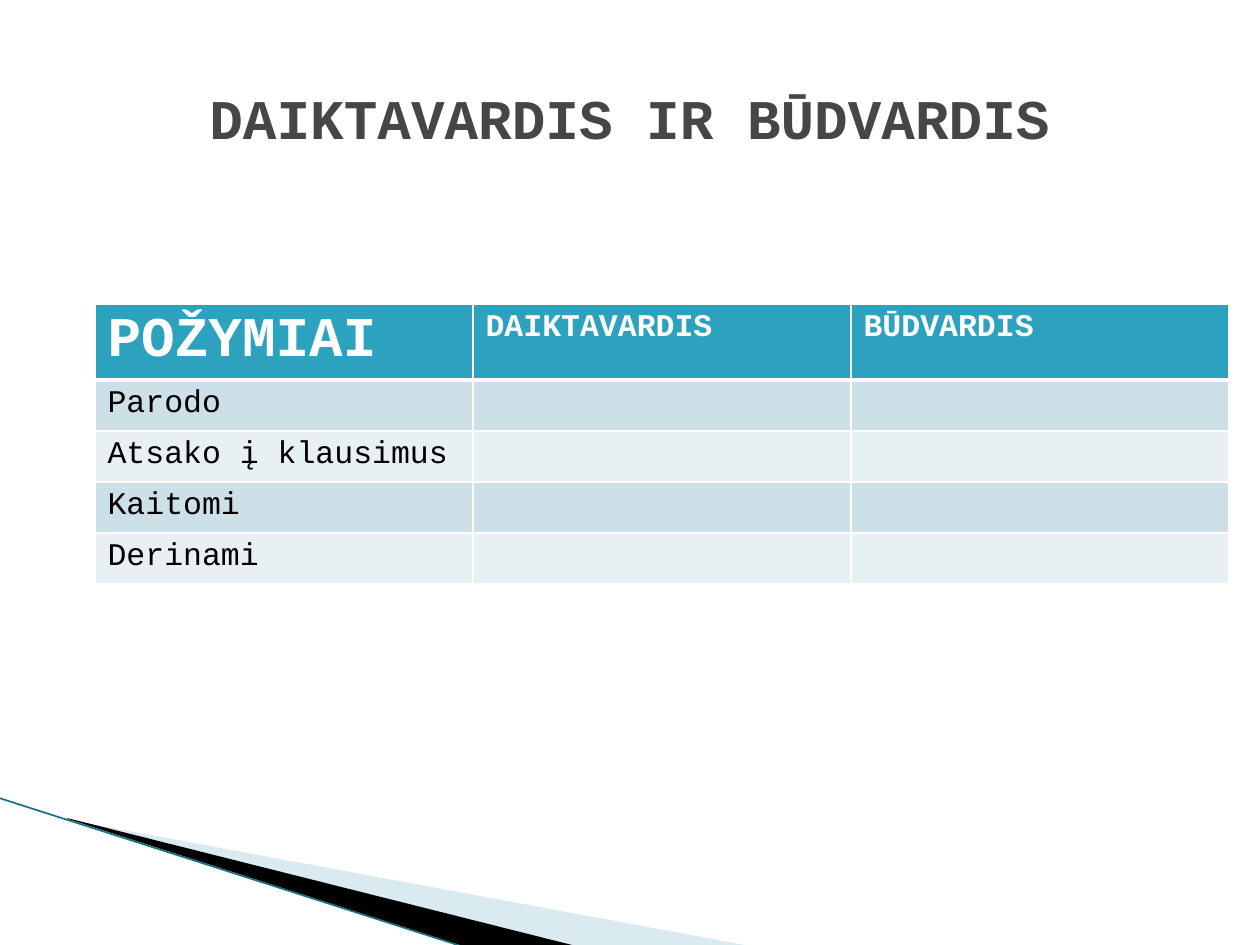
"""Build a slide with a table comparing nouns and adjectives in Lithuanian."""
from lxml import etree
from pptx import Presentation
from pptx import util as u
from pptx.dml.color import RGBColor
from pptx.enum import shapes, text
from pptx.oxml.ns import qn

PX = 914400 / 126
FONT = "Courier New"
COLORS = {
    "title": "464646",
    "header": "2DA2BF",
    "odd": "CDE0E8",
    "even": "E8F0F4",
    "white": "FFFFFF",
    "black": "000000",
    "pale": "A0CBDC",
    "edge": "1B6F80",
}


def px(length):
    return u.Emu(round(length * PX))


def format_font(para, size, color, bold):
    para.font.name = FONT
    para.font.size = u.Pt(size)
    para.font.bold = bold
    para.font.color.rgb = RGBColor.from_string(COLORS[color])


deck = Presentation()
deck.slide_width, deck.slide_height = px(1260), px(945)
page = deck.slides.add_slide(deck.slide_layouts[5])

wedges = [
    ("pale", [(69, 820), (750, 946), (575, 946), (69, 819)]),
    ("black", [(67, 818), (576, 946), (469, 948), (68, 819)]),
]
for color, points in wedges:
    builder = page.shapes.build_freeform(*points[0], scale=PX)
    builder.add_line_segments(points[1:], close=True)
    wedge = builder.convert_to_shape()
    wedge.shadow.inherit = False
    wedge.fill.solid()
    wedge.fill.fore_color.rgb = RGBColor.from_string(COLORS[color])
    wedge.line.fill.background()
    if color == "pale":
        tint = wedge.fill._xPr.find(qn("a:solidFill"))[0]
        etree.SubElement(tint, qn("a:alpha"), val="40000")

edge = page.shapes.add_connector(
    shapes.MSO_CONNECTOR.STRAIGHT, px(-1), px(798), px(467), px(948))
edge.line.width = u.Pt(0.95)
edge.line.color.rgb = RGBColor.from_string(COLORS["edge"])
etree.SubElement(edge._element.spPr, qn("a:effectLst"))

rows = [
    ["POŽYMIAI", "DAIKTAVARDIS", "BŪDVARDIS"],
    ["Parodo", "", ""],
    ["Atsako į klausimus", "", ""],
    ["Kaitomi", "", ""],
    ["Derinami", "", ""],
]
table = page.shapes.add_table(5, 3, px(95), px(304), px(1134), px(279)).table
for column in table.columns:
    column.width = px(378)
for i, words in enumerate(rows):
    header = i == 0
    table.rows[i].height = px(75 if header else 51)
    for j, word in enumerate(words):
        cell = table.cell(i, j)
        props = cell._tc.get_or_add_tcPr()
        for side in "LRTB":
            thick = (header and side == "B") or (i == 1 and side == "T")
            border = etree.SubElement(
                props, qn(f"a:ln{side}"), w=str(u.Pt(3 if thick else 1)))
            paint = etree.SubElement(border, qn("a:solidFill"))
            etree.SubElement(paint, qn("a:srgbClr"), val=COLORS["white"])
        cell.fill.solid()
        shade = "header" if header else "odd" if i % 2 else "even"
        cell.fill.fore_color.rgb = RGBColor.from_string(COLORS[shade])
        cell.text = word
        format_font(cell.text_frame.paragraphs[0], 32 if header and j == 0 else 18,
                    "white" if header else "black", header)

title = page.shapes.title
title.left, title.top, title.width, title.height = px(63), px(38), px(1134), px(158)
title.text_frame.text = "DAIKTAVARDIS IR BŪDVARDIS"
title.text_frame.vertical_anchor = text.MSO_ANCHOR.MIDDLE
heading = title.text_frame.paragraphs[0]
heading.alignment = text.PP_ALIGN.CENTER
format_font(heading, 32, "title", True)

deck.save("out.pptx")
